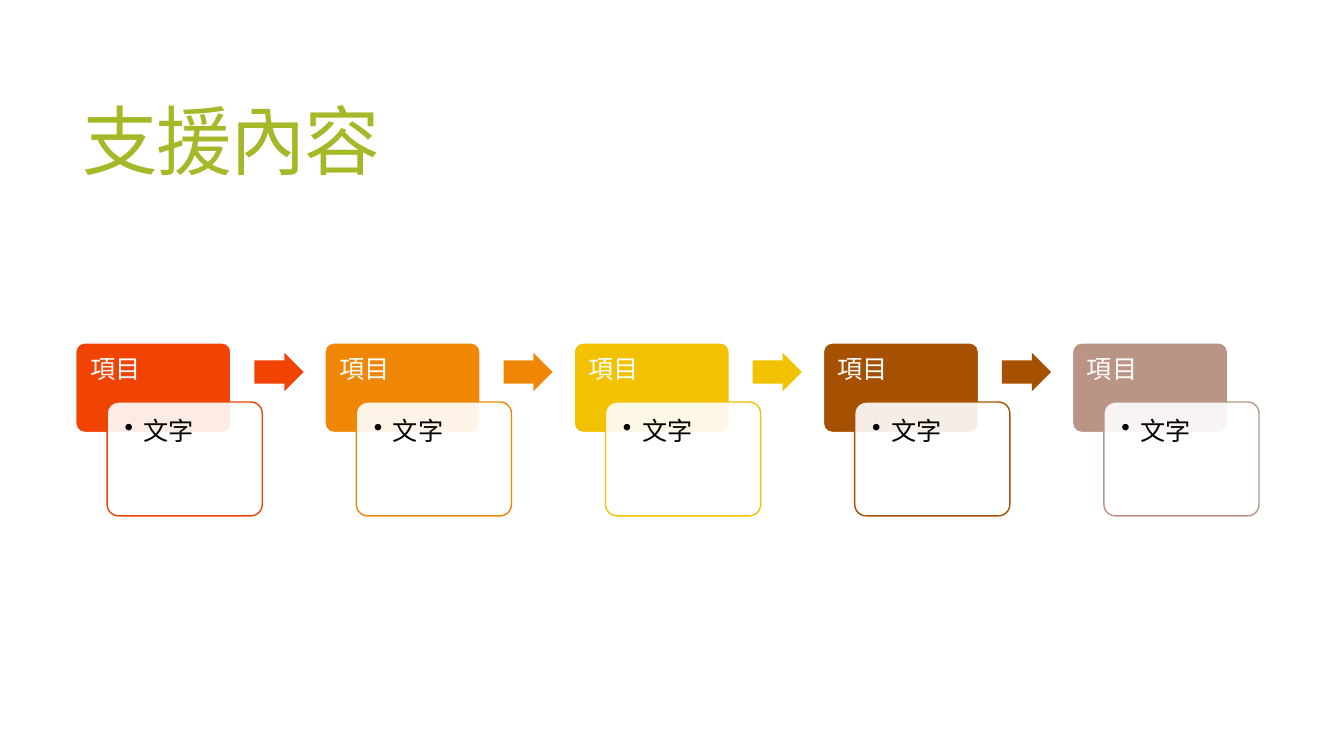
from dataclasses import dataclass, field

import pptx
import pptx.dml.color
import pptx.enum.shapes
import pptx.enum.text
import pptx.oxml.ns
import pptx.util
from lxml import etree

Cm, Pt = pptx.util.Cm, pptx.util.Pt
qn = pptx.oxml.ns.qn
SHAPE = pptx.enum.shapes.MSO_SHAPE
ANCHOR = pptx.enum.text.MSO_ANCHOR

FONT = "Noto Sans CJK TC"
COLORS = {
    "title": "A6B727", "white": "FFFFFF", "black": "000000",
    "red": "F04304", "orange": "EF8606", "yellow": "F2C100",
    "brown": "A65001", "rose": "BA9585",
}
STEP_LEFT, STEP_PITCH = 1.91, 6.28


@dataclass
class Box:
    left: float
    top: float
    width: float
    height: float

    def emu(self) -> list:
        return [Cm(v) for v in (self.left, self.top, self.width, self.height)]


@dataclass
class TextStyle:
    color: str
    size: float = 18
    frame: dict = field(default_factory=dict)
    para: dict = field(default_factory=dict)
    spacing: int = 0
    bullet: bool = False


@dataclass
class Step:
    color: str
    heading: str = "項目"
    body: str = "文字"


INSETS = {"margin_left": Cm(0.36), "margin_right": Cm(0.36),
          "margin_top": Cm(0.36), "vertical_anchor": ANCHOR.TOP}
TITLE = TextStyle("title", 54, {"vertical_anchor": ANCHOR.MIDDLE},
                  {"line_spacing": 0.85}, spacing=-120)
HEADING = TextStyle("white", frame=INSETS | {"margin_bottom": Cm(0.18)},
                    para={"line_spacing": 0.9, "space_after": Pt(6.3)})
BODY = TextStyle("black", frame=INSETS | {"margin_bottom": Cm(0.36)},
                 para={"level": 1, "line_spacing": 0.9, "space_after": Pt(2.7)},
                 bullet=True)

STEPS = [Step(c) for c in ("red", "orange", "yellow", "brown", "rose")]


def rgb(name: str) -> pptx.dml.color.RGBColor:
    return pptx.dml.color.RGBColor.from_string(COLORS[name])


def set_attrs(target, values: dict) -> None:
    for name, value in values.items():
        setattr(target, name, value)


def add_text(s, box: Box, text: str, style: TextStyle) -> None:
    tf = s.shapes.add_textbox(*box.emu()).text_frame
    set_attrs(tf, {"word_wrap": True} | style.frame)
    p = tf.paragraphs[0]
    set_attrs(p, style.para)
    if style.bullet:
        ppr = p._p.get_or_add_pPr()
        ppr.set("marL", str(Cm(0.48)))
        ppr.set("indent", str(-Cm(0.48)))
        etree.SubElement(ppr, qn("a:buChar"), char="•")
    r = p.add_run()
    r.text = text
    set_attrs(r.font, {"name": FONT, "size": Pt(style.size)})
    r.font.color.rgb = rgb(style.color)
    rpr = r._r.get_or_add_rPr()
    rpr.set("lang", "zh-TW")
    rpr.set("spc", str(style.spacing))
    etree.SubElement(rpr, qn("a:ea"), typeface=FONT)


def add_block(s, kind, box: Box, fill: str, line: str | None,
              adjustments: tuple, alpha: int = 100) -> None:
    sp = s.shapes.add_shape(kind, *box.emu())
    sp.shadow.inherit = False
    for i, value in enumerate(adjustments):
        sp.adjustments[i] = value
    sp.fill.solid()
    sp.fill.fore_color.rgb = rgb(fill)
    if alpha < 100:
        clr = sp._element.spPr.find(qn("a:solidFill"))[0]
        etree.SubElement(clr, qn("a:alpha"), val=str(alpha * 1000))
    if line is None:
        sp.line.fill.background()
    else:
        sp.line.color.rgb = rgb(line)
        sp.line.width = Pt(1)


def add_step(s, step: Step, x: float, has_arrow: bool) -> None:
    # Coloured card with its heading
    add_block(s, SHAPE.ROUNDED_RECTANGLE, Box(x, 8.64, 3.91, 2.26),
              step.color, "white", (0.1,))
    add_text(s, Box(x, 8.64, 3.91, 1.5), step.heading, HEADING)
    # Outlined card in front with its bullet
    add_block(s, SHAPE.ROUNDED_RECTANGLE, Box(x + 0.79, 10.13, 3.91, 2.87),
              "white", step.color, (0.1,), alpha=90)
    add_text(s, Box(x + 0.87, 10.21, 3.73, 2.72), step.body, BODY)
    # Arrow to the next step
    if has_arrow:
        add_block(s, SHAPE.RIGHT_ARROW, Box(x + 4.5, 8.89, 1.24, 0.97),
                  step.color, None, (0.6, 0.5))


def main() -> None:
    prs = pptx.Presentation()
    set_attrs(prs, {"slide_width": Cm(33.87), "slide_height": Cm(19.05)})
    s = prs.slides.add_slide(prs.slide_layouts[6])

    # Title
    add_text(s, Box(1.83, 1.4, 29.92, 4.6), "支援內容", TITLE)

    # Process steps
    for i, step in enumerate(STEPS):
        add_step(s, step, STEP_LEFT + i * STEP_PITCH, i < len(STEPS) - 1)

    prs.save("out.pptx")


if __name__ == "__main__":
    main()
